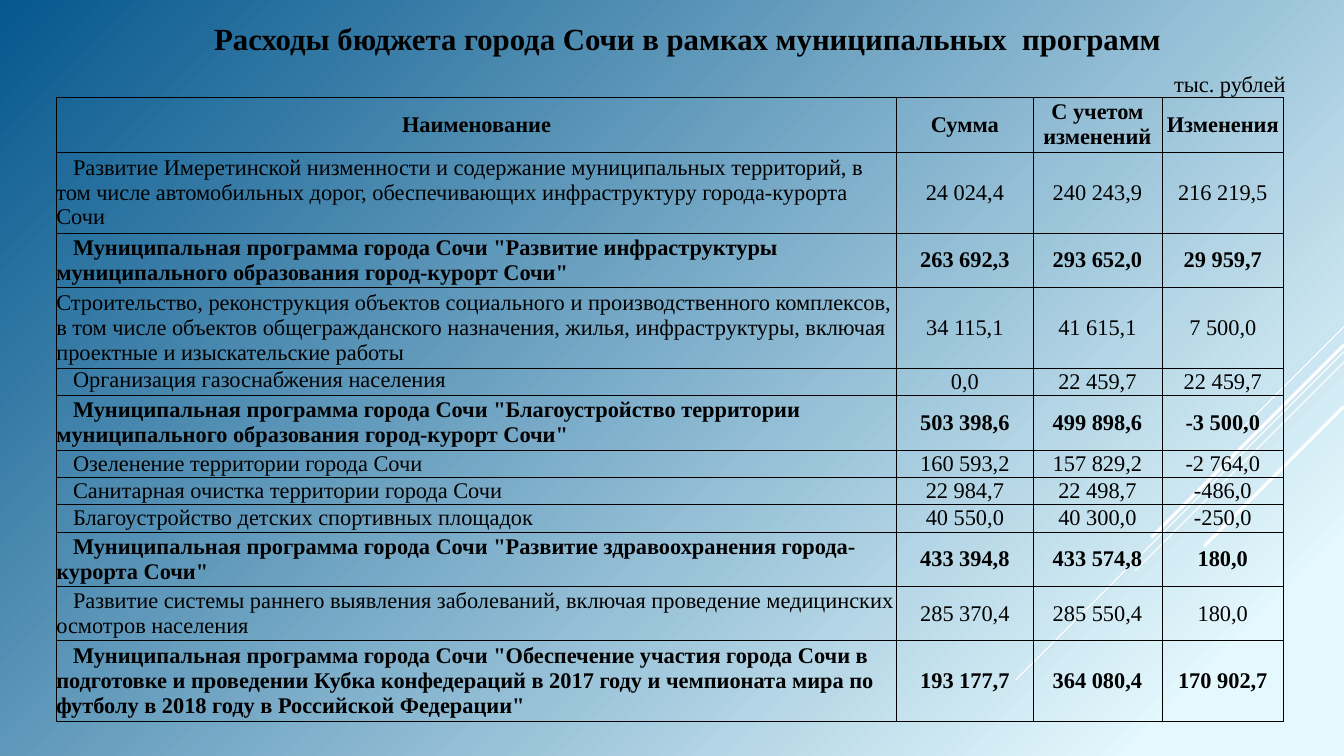
from dataclasses import dataclass

from lxml import etree
from pptx import Presentation
from pptx.dml.color import RGBColor
from pptx.enum import shapes, text
from pptx.oxml import ns
from pptx.util import Cm, Pt


@dataclass(frozen=True)
class Theme:
    font: str = "Times New Roman"
    ink: str = "000000"
    ray: str = "FFFFFF"
    light: str = "E4F8FD"
    deep: str = "06588E"
    head: int = 22
    body: int = 16
    edge: float = 0.5


THEME = Theme()
WIDE, HIGH = 33.87, 19.05
INDENT = 0.42

# Start height, run along each axis, line width
RAYS = [(8.23, 2.54, 0.75), (8.86, 8.28, 0.75), (9.12, 5.26, 0.75),
        (8.69, 4.85, 2.25), (10.24, 3.53, 2.25)]

COLS = [21.18, 3.43, 3.25, 3.07]
LINES = {1: 0.69, 2: 1.37, 3: 2.04}  # row height by count of text lines
HEADS = ["Наименование", "Сумма", "С учетом изменений", "Изменения"]

# Text lines, bold, name, sums
ROWS = [
    (3, False, "Развитие Имеретинской низменности и содержание муниципальных территорий, "
     "в том числе автомобильных дорог, обеспечивающих инфраструктуру города-курорта Сочи",
     "24 024,4", "240 243,9", "216 219,5"),
    (2, True, 'Муниципальная программа города Сочи "Развитие инфраструктуры '
     'муниципального образования город-курорт Сочи"',
     "263 692,3", "293 652,0", "29 959,7"),
    (3, False, "Строительство, реконструкция объектов социального и производственного "
     "комплексов, в том числе объектов общегражданского назначения, жилья, "
     "инфраструктуры, включая проектные и изыскательские работы",
     "34 115,1", "41 615,1", "7 500,0"),
    (1, False, "Организация газоснабжения населения", "0,0", "22 459,7", "22 459,7"),
    (2, True, 'Муниципальная программа города Сочи "Благоустройство территории '
     'муниципального образования город-курорт Сочи"',
     "503 398,6", "499 898,6", "-3 500,0"),
    (1, False, "Озеленение территории города Сочи",
     "160 593,2", "157 829,2", "-2 764,0"),
    (1, False, "Санитарная очистка территории города Сочи",
     "22 984,7", "22 498,7", "-486,0"),
    (1, False, "Благоустройство детских спортивных площадок",
     "40 550,0", "40 300,0", "-250,0"),
    (2, True, 'Муниципальная программа города Сочи "Развитие здравоохранения '
     'города-курорта Сочи"', "433 394,8", "433 574,8", "180,0"),
    (2, False, "Развитие системы раннего выявления заболеваний, включая проведение "
     "медицинских осмотров населения", "285 370,4", "285 550,4", "180,0"),
    (3, True, 'Муниципальная программа города Сочи "Обеспечение участия города Сочи в '
     "подготовке и проведении Кубка конфедераций в 2017 году и чемпионата мира по "
     'футболу в 2018 году в Российской Федерации"',
     "193 177,7", "364 080,4", "170 902,7"),
]
FLUSH = 3  # this row has no first-line indent
TIGHT = 4  # this row has fixed line spacing


def rgb(code):
    return RGBColor.from_string(code)


def write(frame, words, size=THEME.body, bold=False, center=False, indent=0, space=None):
    """Put one formatted paragraph into a text frame."""
    frame.word_wrap = True
    para = frame.paragraphs[0]
    para.alignment = text.PP_ALIGN.CENTER if center else text.PP_ALIGN.LEFT
    if indent:
        para._p.get_or_add_pPr().set("indent", str(Cm(indent)))
    if space:
        para.line_spacing = Pt(space)
    run = para.add_run()
    run.text = words
    font = run.font
    font.name, font.size, font.bold = THEME.font, Pt(size), bold
    font.color.rgb = rgb(THEME.ink)


def paint(slide):
    """Fill the background with a glow from the lower right corner."""
    fill = slide.background.fill
    fill.gradient()
    for stop, place, code in zip(fill.gradient_stops, (0.1, 1), (THEME.light, THEME.deep)):
        stop.position = place
        stop.color.rgb = rgb(code)
    grad = slide.element.find(".//" + ns.qn("a:gradFill"))
    grad.remove(grad.find(ns.qn("a:lin")))
    glow = etree.SubElement(grad, ns.qn("a:path"), path="circle")
    etree.SubElement(glow, ns.qn("a:fillToRect"), l="100000", t="100000")


def add_ray(slide, top, span, width):
    """Draw a diagonal line down from the right edge."""
    ray = slide.shapes.add_connector(shapes.MSO_CONNECTOR.STRAIGHT, Cm(WIDE), Cm(top),
                                     Cm(WIDE - span), Cm(top + span))
    ray.line.color.rgb = rgb(THEME.ray)
    ray.line.width = Pt(width)
    etree.SubElement(ray._element.spPr, ns.qn("a:effectLst"))


def add_title(slide, words):
    title = slide.shapes.title
    title.left, title.top, title.width, title.height = Cm(5.11), Cm(0.36), Cm(24.43), Cm(1.19)
    frame = title.text_frame
    frame.margin_left = frame.margin_right = 0
    frame.vertical_anchor = text.MSO_ANCHOR.MIDDLE
    write(frame, words, size=THEME.head, bold=True, center=True)


def add_unit(slide, words):
    box = slide.shapes.add_textbox(Cm(29.34), Cm(1.65), Cm(3.84), Cm(0.94))
    write(box.text_frame, words)


def set_cell(cell, words, **style):
    cell.margin_left = cell.margin_right = cell.margin_top = cell.margin_bottom = 0
    cell.vertical_anchor = text.MSO_ANCHOR.MIDDLE
    props = cell._tc.get_or_add_tcPr()
    for side in "LRTB":
        edge = etree.SubElement(props, ns.qn("a:ln" + side), w=str(Pt(THEME.edge)))
        fill = etree.SubElement(edge, ns.qn("a:solidFill"))
        etree.SubElement(fill, ns.qn("a:srgbClr"), val=THEME.ink)
    cell.fill.background()
    write(cell.text_frame, words, **style)


def add_grid(slide):
    """Build the budget table."""
    rows = [(2, True, *HEADS)] + ROWS
    tall = [LINES[row[0]] for row in rows]
    grid = slide.shapes.add_table(len(rows), len(COLS), Cm(1.42), Cm(2.46),
                                  Cm(sum(COLS)), Cm(sum(tall))).table
    grid.first_row = grid.horz_banding = False
    for col, width in zip(grid.columns, COLS):
        col.width = Cm(width)
    for r, (_, bold, *cells) in enumerate(rows):
        grid.rows[r].height = Cm(tall[r])
        for c, words in enumerate(cells):
            name = r > 0 and c == 0
            set_cell(grid.cell(r, c), words, bold=bold, center=not name,
                     indent=INDENT if name and r != FLUSH else 0,
                     space=15 if name and r == TIGHT else None)


def main():
    deck = Presentation()
    deck.slide_width, deck.slide_height = Cm(WIDE), Cm(HIGH)
    slide = deck.slides.add_slide(deck.slide_layouts[5])
    # Backdrop
    paint(slide)
    for ray in RAYS:
        add_ray(slide, *ray)
    # Content
    add_title(slide, "Расходы бюджета города Сочи в рамках муниципальных  программ")
    add_grid(slide)
    add_unit(slide, "тыс. рублей")
    deck.save("out.pptx")


if __name__ == "__main__":
    main()
